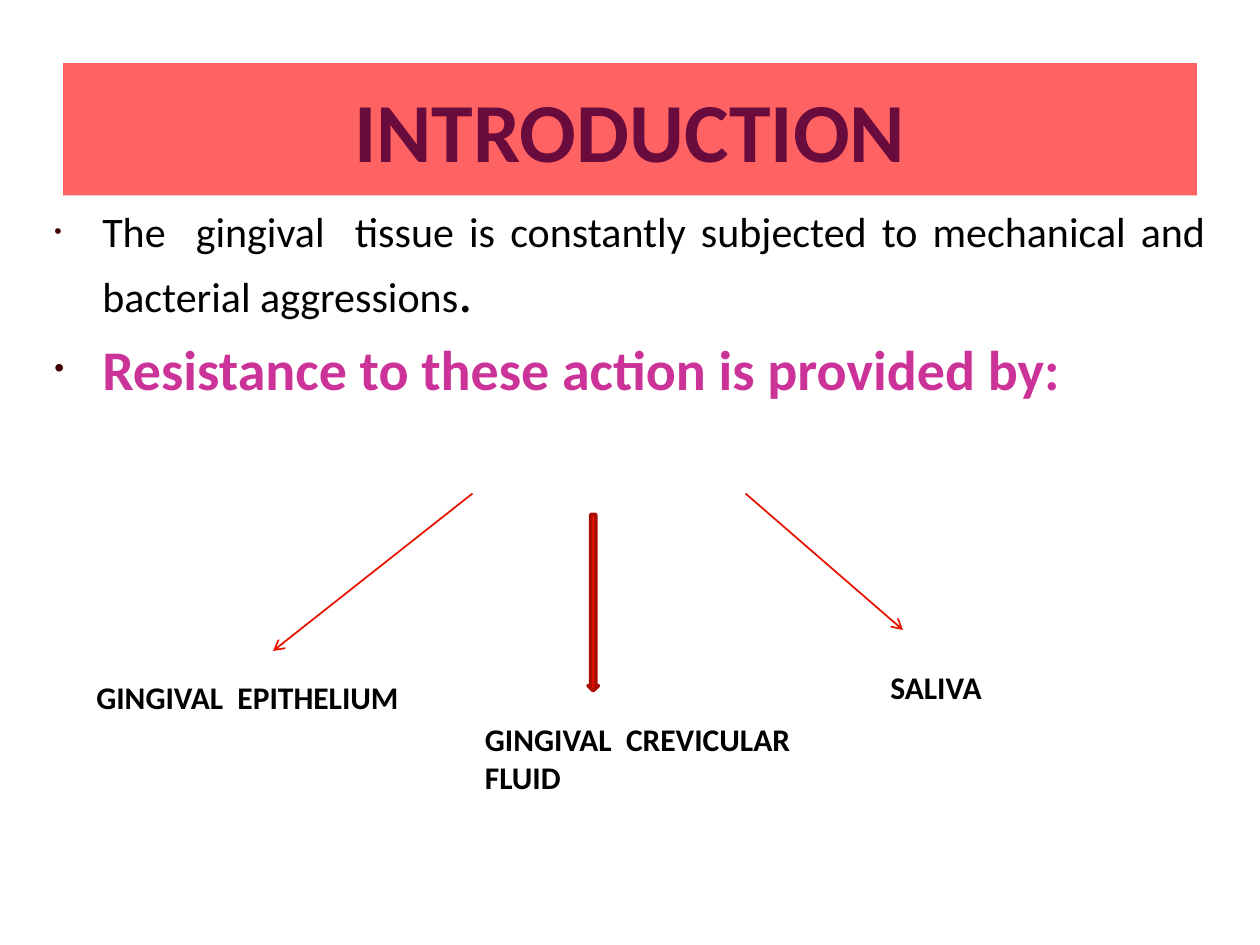
import pptx
import pptx.util
import pptx.dml.color
import pptx.enum.shapes
import pptx.enum.text
import pptx.oxml.ns
import lxml.etree

COLUMNS, ROWS = 120, 90
CELL = pptx.util.Inches(10) // COLUMNS
FONT = "Calibri"
COLORS = {
    "banner": "FF6262", "title": "690B3C", "text": "000000", "accent": "CC3399",
    "bullet": "430000", "arrow": "E91201", "arrow_edge": "AC0D01",
}
ALIGN = pptx.enum.text.PP_ALIGN
ANCHOR = pptx.enum.text.MSO_ANCHOR


def rgb(name):
    """Return the named palette colour."""
    return pptx.dml.color.RGBColor.from_string(COLORS[name])


def cells(*counts):
    """Convert grid counts to lengths."""
    return [round(count * CELL) for count in counts]


def style(font, size, color, bold=False):
    """Set typeface, size, colour and weight of a font."""
    font.name, font.size, font.bold = FONT, pptx.util.Pt(size), bold
    font.color.rgb = rgb(color)


def add_node(parent, tag, **attributes):
    """Append a drawing element to a parent element."""
    return lxml.etree.SubElement(parent, pptx.oxml.ns.qn(tag), attributes)


def add_text(page, box):
    """Add a wrapping text box and return its text frame."""
    frame = page.shapes.add_textbox(*cells(*box)).text_frame
    frame.word_wrap = True
    return frame


def place_title(page, box, text):
    """Turn the title placeholder into a filled banner."""
    title = page.shapes.title
    title.left, title.top, title.width, title.height = cells(*box)
    title.fill.solid()
    title.fill.fore_color.rgb = rgb("banner")
    title.text_frame.text = text
    title.text_frame.vertical_anchor = ANCHOR.MIDDLE
    para = title.text_frame.paragraphs[0]
    para.alignment = ALIGN.CENTER
    style(para.font, 48, "title", bold=True)


def make_bullet(para):
    """Give a paragraph a small hanging bullet."""
    properties = para._p.get_or_add_pPr()
    indent = pptx.util.Inches(0.38)
    properties.set("marL", str(indent))
    properties.set("indent", str(-indent))
    color = add_node(properties, "a:buClr")
    add_node(color, "a:srgbClr", val=COLORS["bullet"])
    add_node(properties, "a:buSzPct", val="50000")
    add_node(properties, "a:buFont", typeface="Arial")
    add_node(properties, "a:buChar", char="•")


def place_body(page, box, paragraphs):
    """Write justified bullets from lists of text, size, colour and weight."""
    frame = add_text(page, box)
    for index, spans in enumerate(paragraphs):
        para = frame.add_paragraph() if index else frame.paragraphs[0]
        make_bullet(para)
        para.alignment = ALIGN.JUSTIFY
        if index:
            para.space_before = pptx.util.Pt(6.4)
        for text, *look in spans:
            span = para.add_run()
            span.text = text
            style(span.font, *look)


def place_label(page, box, text, indent=0):
    """Write one bold label, indented by a number of columns."""
    frame = add_text(page, box)
    frame.margin_left += round(indent * CELL)
    frame.text = text
    style(frame.paragraphs[0].font, 18, "text", bold=True)


def place_block_arrow(page, box):
    """Draw the thick arrow pointing down."""
    arrow = page.shapes.add_shape(pptx.enum.shapes.MSO_SHAPE.DOWN_ARROW, *cells(*box))
    arrow.shadow.inherit = False
    arrow.fill.solid()
    arrow.fill.fore_color.rgb = rgb("arrow")
    arrow.line.color.rgb = rgb("arrow_edge")
    arrow.line.width = pptx.util.Pt(2)


def place_line_arrow(page, ends):
    """Draw a thin line with an open arrowhead at its end."""
    line = page.shapes.add_connector(pptx.enum.shapes.MSO_CONNECTOR.STRAIGHT, *cells(*ends))
    line.line.color.rgb = rgb("arrow")
    line.line.width = pptx.util.Pt(1)
    add_node(line.line._get_or_add_ln(), "a:tailEnd", type="arrow")
    add_node(line._element.spPr, "a:effectLst")


def place_branches(page, left, top):
    """Draw three arrows from the statement to their labels."""
    place_label(page, (left, top + 17, 36, 4.8), "GINGIVAL  EPITHELIUM")
    place_label(page, (left + 37, top + 21, 34, 8.5), "GINGIVAL  CREVICULAR FLUID")
    place_label(page, (left + 73, top + 16, 22, 4.8), "SALIVA", indent=2.6)
    place_block_arrow(page, (left + 48, top + 2, 1, 16.8))
    place_line_arrow(page, (left + 37, top, left + 18, top + 15))
    place_line_arrow(page, (left + 63, top, left + 78, top + 13))


def main():
    """Build and save the introduction slide."""
    deck = pptx.Presentation()
    deck.slide_width, deck.slide_height = cells(COLUMNS, ROWS)
    page = deck.slides.add_slide(deck.slide_layouts[5])
    place_title(page, (6, 6, 108, 12.6), "INTRODUCTION")
    place_body(page, (4, 19, 112, 67), [
        [("The  gingival  tissue is constantly subjected to mechanical and "
          "bacterial aggressions", 24, "text"), (".", 32, "text")],
        [("Resistance to these action is provided by:", 32, "accent", True)],
    ])
    place_branches(page, 8, 47)
    deck.save("out.pptx")


if __name__ == "__main__":
    main()
